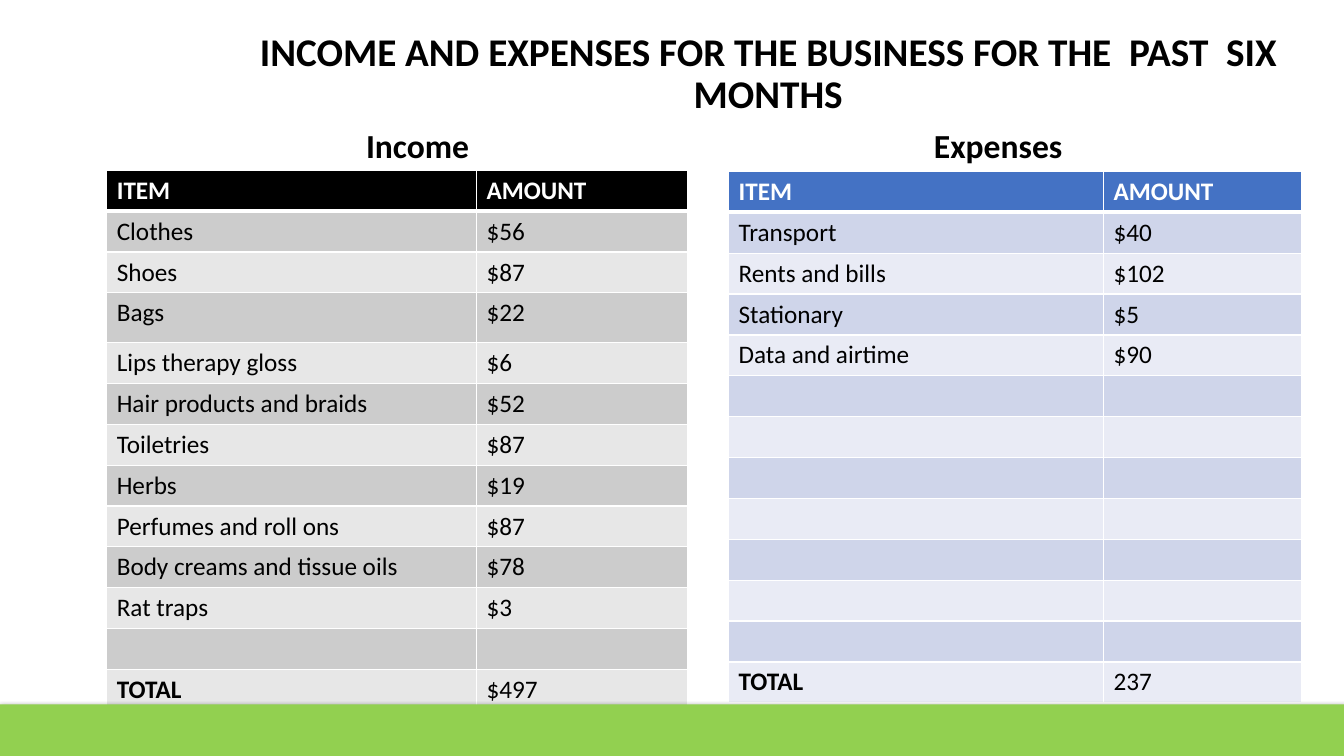
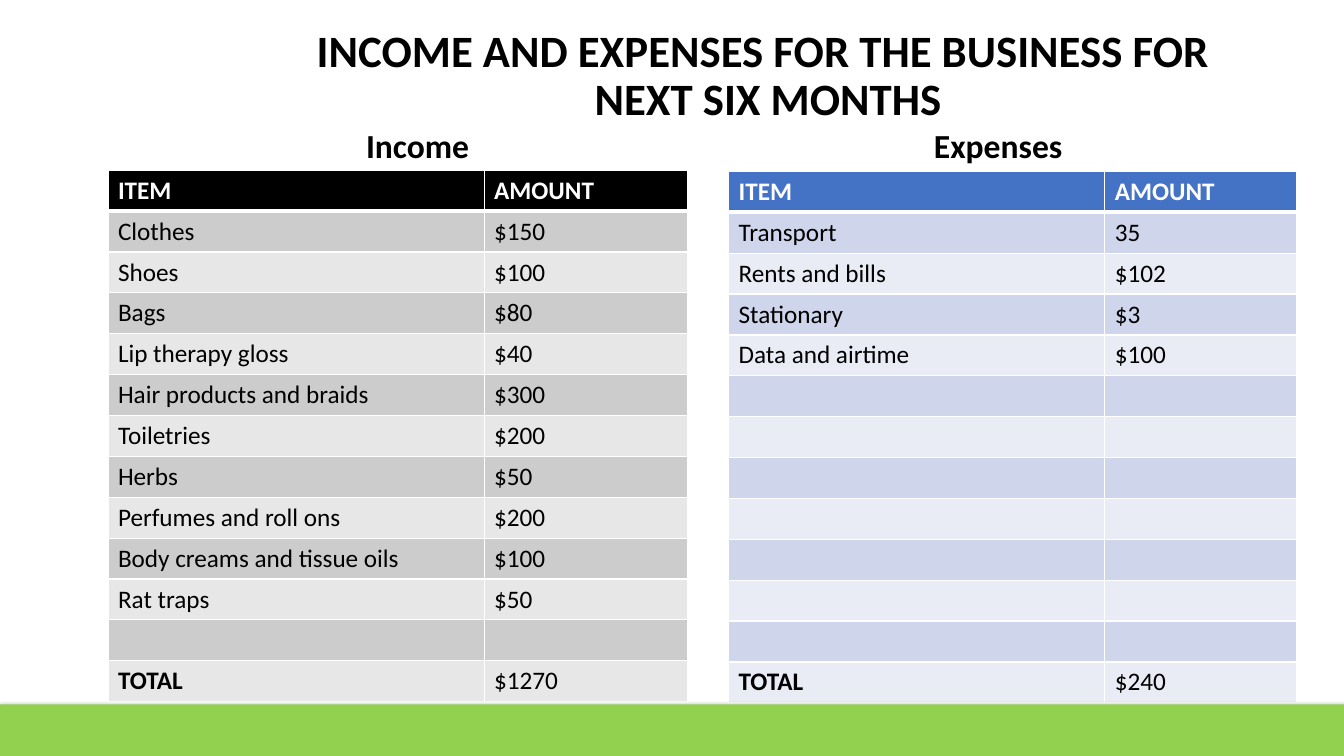
from lxml.etree import SubElement
from pptx import Presentation
from pptx.dml.color import RGBColor
from pptx.enum.shapes import MSO_SHAPE
from pptx.enum.text import MSO_ANCHOR, PP_ALIGN
from pptx.oxml.ns import qn
from pptx.util import Cm, Pt

FONT = "Calibri"
BLACK, WHITE, GREEN = "000000", "FFFFFF", "92D050"
WIDTH, HEIGHT = 33.87, 19.05
BAND_TOP = 17.75
ROW_HEIGHT, ROW_COUNT = 1.03, 13
HEADER = ("ITEM", "AMOUNT")
HEADING_TOP, HEADING_WIDTH, HEADING_HEIGHT = 2.69, 13.59, 1.6

SIDES = {
    "Income": {"heading_left": 3.73, "top": 4.29,
               "colors": (BLACK, "CCCCCC", "E7E7E7")},
    "Expenses": {"heading_left": 18.36, "top": 4.32,
                 "colors": ("4472C4", "CFD5EA", "E9EBF5")},
}

SLIDES = [
    {
        "title": "INCOME AND EXPENSES FOR THE BUSINESS FOR THE  PAST  SIX MONTHS",
        "title_size": 28, "title_top": 0.89, "title_height": 2.0,
        "tables": {
            "Income": {
                "left": 2.69, "columns": (9.32, 5.31), "tall_rows": {3: 1.25},
                "items": [("Clothes", "$56"), ("Shoes", "$87"), ("Bags", "$22"),
                          ("Lips therapy gloss", "$6"),
                          ("Hair products and braids", "$52"),
                          ("Toiletries", "$87"), ("Herbs", "$19"),
                          ("Perfumes and roll ons", "$87"),
                          ("Body creams and tissue oils", "$78"),
                          ("Rat traps", "$3")],
                "total": "$497"},
            "Expenses": {
                "left": 18.36, "columns": (9.45, 4.98), "tall_rows": {},
                "items": [("Transport", "$40"), ("Rents and bills", "$102"),
                          ("Stationary", "$5"), ("Data and airtime", "$90")],
                "total": "237"},
        },
    },
    {
        "title": "INCOME AND EXPENSES FOR THE BUSINESS FOR \vNEXT SIX MONTHS",
        "title_size": 32, "title_top": 1.17, "title_height": 1.55,
        "tables": {
            "Income": {
                "left": 2.72, "columns": (9.48, 5.13), "tall_rows": {},
                "items": [("Clothes", "$150"), ("Shoes", "$100"), ("Bags", "$80"),
                          ("Lip therapy gloss", "$40"),
                          ("Hair products and braids", "$300"),
                          ("Toiletries", "$200"), ("Herbs", "$50"),
                          ("Perfumes and roll ons", "$200"),
                          ("Body creams and tissue oils", "$100"),
                          ("Rat traps", "$50")],
                "total": "$1270"},
            "Expenses": {
                "left": 18.36, "columns": (9.48, 4.83), "tall_rows": {},
                "items": [("Transport", "35"), ("Rents and bills", "$102"),
                          ("Stationary", "$3"), ("Data and airtime", "$100")],
                "total": "$240"},
        },
    },
]


def rgb(color):
    """Turn a hex string into a colour."""
    return RGBColor.from_string(color)


def write(frame, text, size=18, color=BLACK, bold=False, align=PP_ALIGN.LEFT,
          line_spacing=None, space_before=0):
    """Write one formatted paragraph into a text frame."""
    paragraph = frame.paragraphs[0]
    paragraph.text = text
    paragraph.alignment = align
    paragraph.line_spacing = line_spacing
    paragraph.space_before = Pt(space_before)
    for run in paragraph.runs:
        run.font.name = FONT
        run.font.size = Pt(size)
        run.font.bold = bold
        run.font.color.rgb = rgb(color)


def add_heading(slide, text, left, top, width, height, anchor, **style):
    """Add a bold, centred text box."""
    frame = slide.shapes.add_textbox(
        Cm(left), Cm(top), Cm(width), Cm(height)).text_frame
    frame.word_wrap = True
    frame.vertical_anchor = anchor
    write(frame, text, bold=True, align=PP_ALIGN.CENTER, line_spacing=0.9, **style)


def set_borders(cell, top, bottom):
    """Draw white cell borders with the given top and bottom widths."""
    properties = cell._tc.get_or_add_tcPr()
    for tag, width in (("lnL", 1), ("lnR", 1), ("lnT", top), ("lnB", bottom)):
        line = SubElement(properties, qn(f"a:{tag}"), w=str(Pt(width)))
        fill = SubElement(line, qn("a:solidFill"))
        SubElement(fill, qn("a:srgbClr"), val=WHITE)


def add_amounts(slide, side, content):
    """Add a table of items, padded with empty rows down to the total."""
    items = content["items"]
    padding = [("", "")] * (ROW_COUNT - len(items) - 2)
    rows = [HEADER, *items, *padding, ("TOTAL", content["total"])]
    heights = [content["tall_rows"].get(index, ROW_HEIGHT)
               for index in range(ROW_COUNT)]
    columns = content["columns"]
    table = slide.shapes.add_table(
        ROW_COUNT, len(columns), Cm(content["left"]), Cm(side["top"]),
        Cm(sum(columns)), Cm(sum(heights))).table
    table.horz_banding = False
    for column, width in zip(table.columns, columns):
        column.width = Cm(width)
    header_fill, *band_fills = side["colors"]
    for index, texts in enumerate(rows):
        is_header = index == 0
        table.rows[index].height = Cm(heights[index])
        for position, text in enumerate(texts):
            cell = table.cell(index, position)
            set_borders(cell, 3 if index == 1 else 1, 3 if is_header else 1)
            cell.fill.solid()
            cell.fill.fore_color.rgb = rgb(
                header_fill if is_header else band_fills[(index - 1) % 2])
            write(cell.text_frame, text, color=WHITE if is_header else BLACK,
                  bold=is_header or text == "TOTAL")


def add_band(slide):
    """Add the green footer band with its soft shadow."""
    band = slide.shapes.add_shape(
        MSO_SHAPE.RECTANGLE, 0, Cm(BAND_TOP), Cm(WIDTH), Cm(HEIGHT - BAND_TOP))
    band.fill.solid()
    band.fill.fore_color.rgb = rgb(GREEN)
    band.line.fill.background()
    band.shadow.inherit = False
    effects = band._element.spPr.find(qn("a:effectLst"))
    shadow = SubElement(effects, qn("a:outerShdw"), blurRad=str(Pt(4.5)),
                        dist=str(Pt(1.5)), dir="5400000", algn="ctr",
                        rotWithShape="0")
    color = SubElement(shadow, qn("a:srgbClr"), val=BLACK)
    SubElement(color, qn("a:alpha"), val="63000")


def build_slide(presentation, content):
    """Build one slide with a title, two tables and the band."""
    slide = presentation.slides.add_slide(presentation.slide_layouts[6])
    add_heading(slide, content["title"], 5.44, content["title_top"], 27.84,
                content["title_height"], MSO_ANCHOR.MIDDLE,
                size=content["title_size"])
    for name, side in SIDES.items():
        add_heading(slide, name, side["heading_left"], HEADING_TOP, HEADING_WIDTH,
                    HEADING_HEIGHT, MSO_ANCHOR.BOTTOM, size=24, space_before=10)
        add_amounts(slide, side, content["tables"][name])
    add_band(slide)


def main():
    """Build and save the presentation."""
    presentation = Presentation()
    presentation.slide_width = Cm(WIDTH)
    presentation.slide_height = Cm(HEIGHT)
    for content in SLIDES:
        build_slide(presentation, content)
    presentation.save("out.pptx")


if __name__ == "__main__":
    main()
